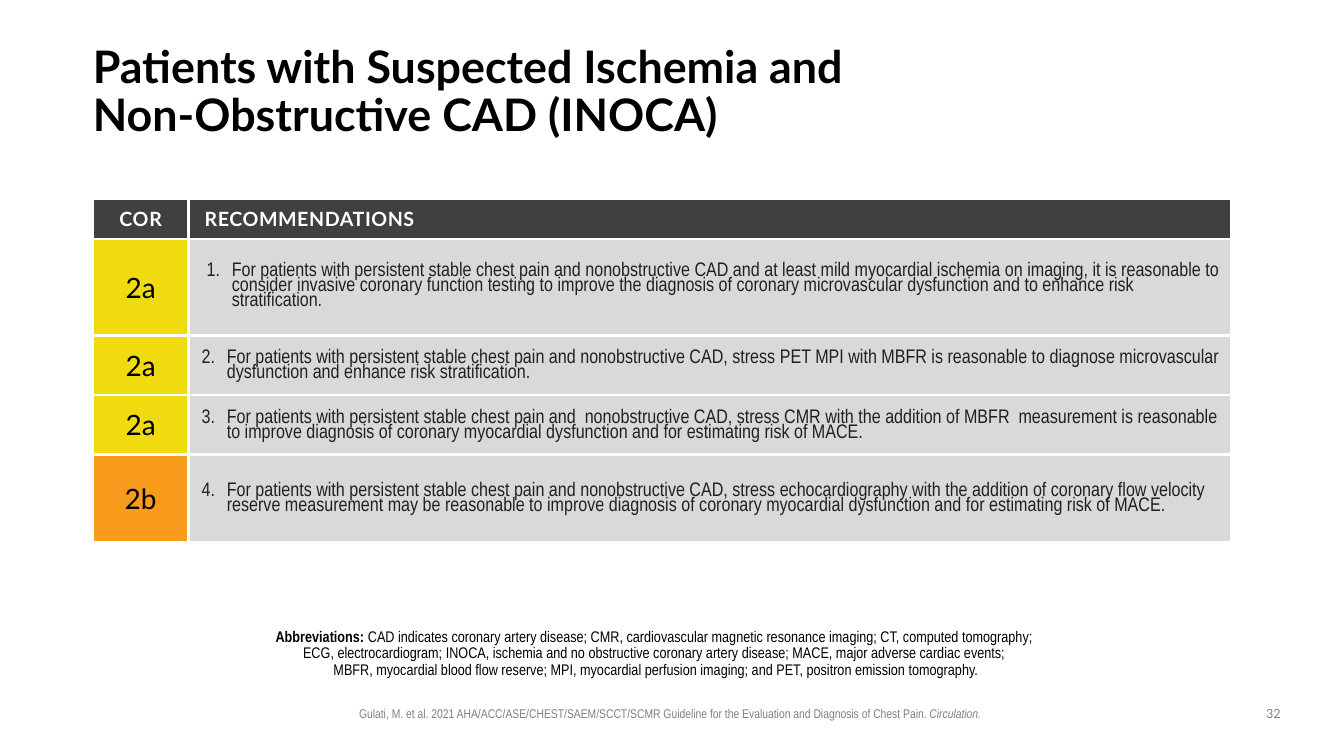
from lxml import etree
from pptx import Presentation
from pptx.dml.color import RGBColor
from pptx.enum.text import MSO_ANCHOR as ANCHOR, PP_ALIGN as ALIGN
from pptx.oxml.ns import qn
from pptx.util import Inches, Pt

HEAD, BODY = "Lato", "Arial Narrow"
GRAY, INK, YELLOW, ORANGE = "808080", "231F20", "F0DB0E", "F99B1D"
RECOMMENDATIONS = [
    ("2a", YELLOW, 0.96, "For patients with persistent stable chest pain and nonobstructive CAD and at least mild myocardial ischemia on imaging, it is reasonable to consider invasive coronary function testing to improve the diagnosis of coronary microvascular dysfunction and to enhance risk stratification."),
    ("2a", YELLOW, 0.59, "For patients with persistent stable chest pain and nonobstructive CAD, stress PET MPI with MBFR is reasonable to diagnose microvascular dysfunction and enhance risk stratification."),
    ("2a", YELLOW, 0.59, "For patients with persistent stable chest pain and  nonobstructive CAD, stress CMR with the addition of MBFR  measurement is reasonable to improve diagnosis of coronary myocardial dysfunction and for estimating risk of MACE."),
    ("2b", ORANGE, 0.87, "For patients with persistent stable chest pain and nonobstructive CAD, stress echocardiography with the addition of coronary flow velocity reserve measurement may be reasonable to improve diagnosis of coronary myocardial dysfunction and for estimating risk of MACE."),
]


def rgb(value):
    return RGBColor.from_string(value)


def style(item, size, name, color, bold=False):
    f = item.font
    f.size, f.name, f.bold = Pt(size), name, bold
    f.color.rgb = rgb(color)


def set_insets(item, left, top, right, bottom):
    item.margin_left, item.margin_top = Inches(left), Inches(top)
    item.margin_right, item.margin_bottom = Inches(right), Inches(bottom)


def add_text(slide, box, text, size, name, color, align=ALIGN.CENTER, bold=False):
    tf = slide.shapes.add_textbox(*map(Inches, box)).text_frame
    tf.word_wrap = True
    tf.text = text
    p = tf.paragraphs[0]
    p.alignment = align
    for r in p.runs:
        style(r, size, name, color, bold)
    return tf


def add_title(slide, box):
    tf = add_text(slide, box, "Patients with Suspected Ischemia and \vNon-Obstructive CAD (INOCA)",
                  32, HEAD, "000000", ALIGN.LEFT, True)
    set_insets(tf, 0, 0, 0, 0)
    tf.vertical_anchor = ANCHOR.MIDDLE
    tf.paragraphs[0].line_spacing = 0.9


def fill_cell(cell, text, color):
    cell.text = text
    cell.vertical_anchor = ANCHOR.MIDDLE
    tcPr = cell._tc.get_or_add_tcPr()
    for side in ("a:lnL", "a:lnR", "a:lnT", "a:lnB"):
        ln = etree.SubElement(tcPr, qn(side), w=str(Pt(2.25)))
        fill = etree.SubElement(ln, qn("a:solidFill"))
        etree.SubElement(fill, qn("a:srgbClr"), val="FFFFFF")
    cell.fill.solid()
    cell.fill.fore_color.rgb = rgb(color)
    return cell.text_frame.paragraphs[0]


def add_heading(cell, text, spacing):
    p = fill_cell(cell, text, "404040")
    r = p.runs[0]
    style(r, 14, HEAD, "FFFFFF", True)
    r.font._element.set("spc", str(spacing))
    return p


def add_class(cell, text, color):
    p = fill_cell(cell, text, color)
    set_insets(cell, 0.05, 0.05, 0.05, 0.05)
    p.alignment = ALIGN.CENTER
    style(p.runs[0], 20, HEAD, "000000")


def add_recommendation(cell, number, text):
    p = fill_cell(cell, text, "D9D9D9")
    set_insets(cell, *((0.05,) * 4 if number == 1 else (0, 0.03, 0, 0)))
    p.line_spacing = 0.8
    pPr = p._p.get_or_add_pPr()
    pPr.set("marL", str(Inches(0.38)))
    pPr.set("indent", str(Inches(-0.25)))
    etree.SubElement(pPr, qn("a:buFont"), typeface="+mj-lt")
    etree.SubElement(pPr, qn("a:buAutoNum"), type="arabicPeriod", startAt=str(number))
    style(p.runs[0], 14, BODY, INK)


def add_recommendation_table(slide, box):
    shape = slide.shapes.add_table(len(RECOMMENDATIONS) + 1, 2, *map(Inches, box))
    table = shape.table
    table.columns[0].width = Inches(0.95)
    table.columns[1].width = Inches(box[2] - 0.95)
    table.rows[0].height = Inches(0.4)
    add_heading(table.cell(0, 0), "COR", 50).alignment = ALIGN.CENTER
    p = add_heading(table.cell(0, 1), "RECOMMENDATIONS", 40)
    p._p.get_or_add_pPr().set("marL", str(Inches(0.06)))
    for i, (cor, color, height, text) in enumerate(RECOMMENDATIONS, 1):
        table.rows[i].height = Inches(height)
        add_class(table.cell(i, 0), cor, color)
        add_recommendation(table.cell(i, 1), i, text)


def add_abbreviations(slide, box):
    tf = add_text(slide, box, "Abbreviations: ", 11, BODY, "000000", bold=True)
    set_insets(tf, 0, 0.05, 0.1, 0.05)
    p = tf.paragraphs[0]
    p.line_spacing = 0.9
    lines = [
        "CAD indicates coronary artery disease; CMR, cardiovascular magnetic resonance imaging; CT, computed tomography; ",
        "ECG, electrocardiogram; INOCA, ischemia and no obstructive coronary artery disease; MACE, major adverse cardiac events; ",
        "MBFR, myocardial blood flow reserve; MPI, myocardial perfusion imaging; and PET, positron emission tomography.",
    ]
    for i, line in enumerate(lines):
        if i:
            p.add_line_break()
        r = p.add_run()
        r.text = line
        style(r, 11, BODY, "000000")


def add_footer(slide, box):
    left, top, width, height = box
    tf = add_text(slide, (left, top, 6.98, height),
                  "Gulati, M. et al. 2021 AHA/ACC/ASE/CHEST/SAEM/SCCT/SCMR Guideline for the Evaluation and Diagnosis of Chest Pain. ",
                  9, BODY, GRAY)
    r = tf.paragraphs[0].add_run()
    r.text = "Circulation. "
    style(r, 9, BODY, GRAY)
    r.font.italic = True
    add_text(slide, (left + width - 0.42, top, 0.42, height), "32", 9, HEAD, GRAY)


def main():
    prs = Presentation()
    prs.slide_width, prs.slide_height = Inches(13.33), Inches(7.5)
    slide = prs.slides.add_slide(prs.slide_layouts[6])
    add_title(slide, (0.92, 0.5, 11.39, 0.85))
    add_recommendation_table(slide, (0.92, 1.97, 11.29, 3.41))
    add_abbreviations(slide, (1.87, 6.19, 9.38, 0.51))
    add_footer(slide, (3.17, 6.95, 9.67, 0.25))
    prs.save("out.pptx")


if __name__ == "__main__":
    main()
